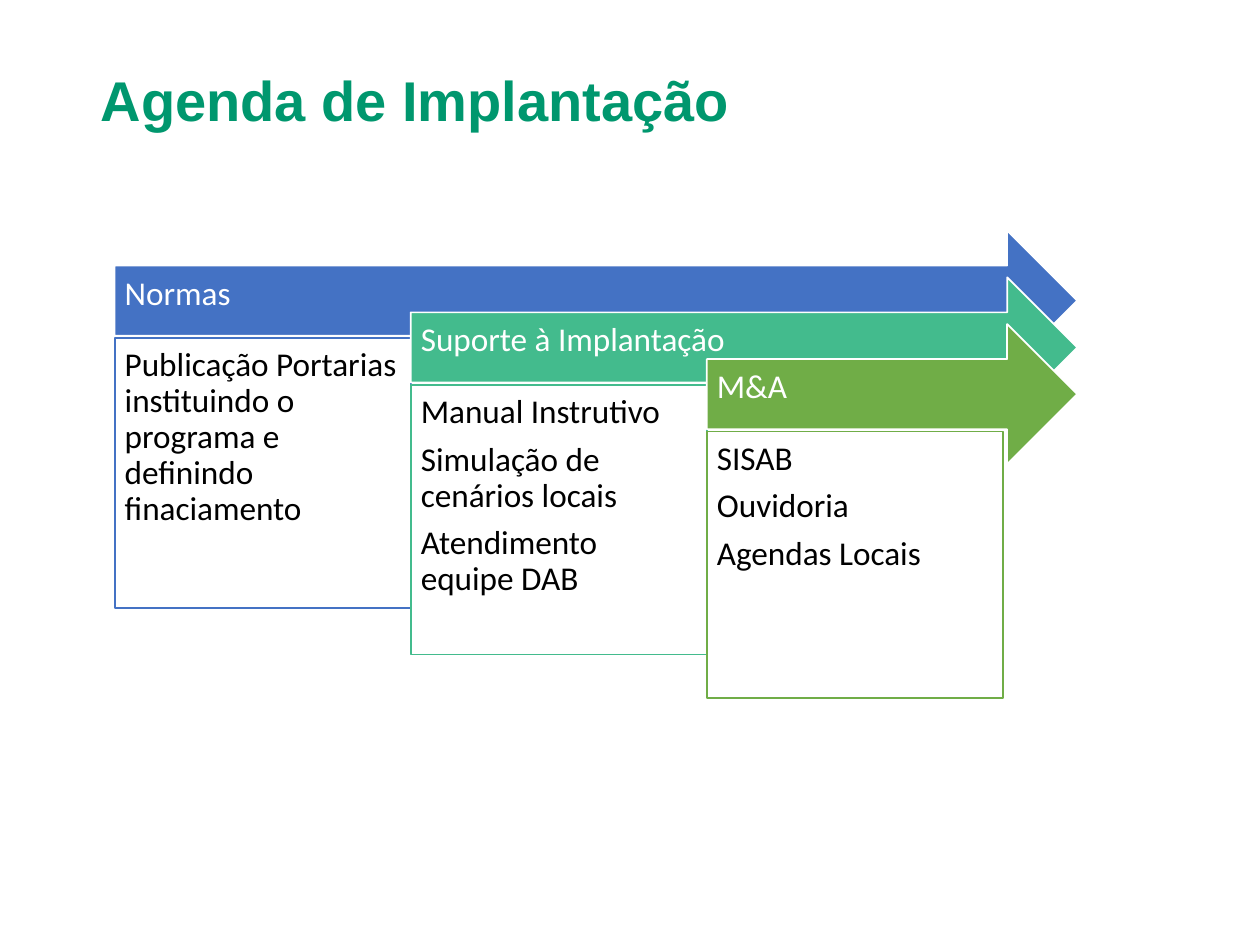
"""Build the implementation agenda slide with three cascading stages."""
from dataclasses import dataclass

from pptx import Presentation
from pptx.dml.color import RGBColor
from pptx.enum.shapes import MSO_SHAPE
from pptx.enum.text import MSO_ANCHOR, PP_ALIGN
from pptx.util import Inches, Pt


@dataclass(frozen=True)
class Theme:
    """Colours, fonts and type sizes of the slide."""
    title: str = "00976E"
    light: str = "FFFFFF"
    dark: str = "000000"
    stages: tuple = ("4472C4", "43BB8D", "70AD47")
    title_font: str = "Arial"
    body_font: str = "Calibri"
    title_size: float = 32
    body_size: float = 19
    paragraph_gap: float = 6.65


@dataclass(frozen=True)
class Box:
    """A rectangle in inches."""
    left: float
    top: float
    width: float
    height: float

    def inner_box(self, left, top, width, height):
        """Return a box given as shares of this one."""
        return Box(self.left + left * self.width, self.top + top * self.height,
                   width * self.width, height * self.height)

    def lengths(self):
        """Return left, top, width and height as slide lengths."""
        return [Inches(value) for value in (self.left, self.top, self.width, self.height)]


THEME = Theme()
SLIDE = Box(0, 0, 10, 7.5)
STAGES = (
    ("Normas", ["Publicação Portarias instituindo o programa e definindo finaciamento"]),
    ("Suporte à Implantação",
     ["Manual Instrutivo", "Simulação de cenários locais", "Atendimento equipe DAB"]),
    ("M&A", ["SISAB", "Ouvidoria", "Agendas Locais"]),
)


def set_margins(frame, left, top, right, bottom):
    """Set the inner margins of a text frame in inches."""
    frame.margin_left, frame.margin_top = Inches(left), Inches(top)
    frame.margin_right, frame.margin_bottom = Inches(right), Inches(bottom)


def style_paragraph(paragraph, font_name, size, color, bold=False):
    """Give a paragraph its font, alignment and line spacing."""
    paragraph.alignment = PP_ALIGN.LEFT
    paragraph.line_spacing = 0.9
    font = paragraph.font
    font.name, font.size, font.bold = font_name, Pt(size), bold
    font.color.rgb = RGBColor.from_string(color)


def add_title(slide, box, text):
    """Place the title placeholder in its box."""
    title = slide.shapes.title
    title.left, title.top, title.width, title.height = box.lengths()
    frame = title.text_frame
    frame.text = text
    frame.word_wrap = True
    frame.vertical_anchor = MSO_ANCHOR.BOTTOM
    set_margins(frame, 0.05, 0.05, 0.05, 0.05)
    style_paragraph(frame.paragraphs[0], THEME.title_font, THEME.title_size, THEME.title, True)


def add_panel(slide, box, kind, fill, line, texts, color):
    """Add a filled, outlined shape with its paragraphs."""
    shape = slide.shapes.add_shape(kind, *box.lengths())
    shape.shadow.inherit = False
    shape.fill.solid()
    shape.fill.fore_color.rgb = RGBColor.from_string(fill)
    shape.line.color.rgb = RGBColor.from_string(line)
    shape.line.width = Pt(1)
    frame = shape.text_frame
    frame.text = "\n".join(texts)
    frame.word_wrap = True
    for paragraph in frame.paragraphs:
        style_paragraph(paragraph, THEME.body_font, THEME.body_size, color)
        paragraph.space_after = Pt(THEME.paragraph_gap)
    return shape


def add_stage(slide, arrow_box, body_box, color, heading, items):
    """Add one stage: a heading arrow and the list below it."""
    arrow = add_panel(slide, arrow_box, MSO_SHAPE.RIGHT_ARROW, color, THEME.light,
                      [heading], THEME.light)
    arrow.text_frame.vertical_anchor = MSO_ANCHOR.MIDDLE
    set_margins(arrow.text_frame, 0.08, 0.08, 0.28, 0.18)
    body = add_panel(slide, body_box, MSO_SHAPE.RECTANGLE, THEME.light, color,
                     items, THEME.dark)
    body.text_frame.vertical_anchor = MSO_ANCHOR.TOP
    set_margins(body.text_frame, 0.08, 0.08, 0.08, 0.08)


def add_cascade(slide, box):
    """Step the stages right and down; all arrows end at the right edge."""
    column, row = 2.35 / box.width, 0.1
    for index, (heading, items) in enumerate(STAGES):
        left, top = index * column, index * row
        body_top = top + 2.3 * row
        arrow_box = box.inner_box(left, top, 1 - left, 3 * row)
        body_box = box.inner_box(left, body_top, column, min(5.77 * row, 1 - body_top))
        add_stage(slide, arrow_box, body_box, THEME.stages[index], heading, items)


def main():
    """Create and save the presentation."""
    presentation = Presentation()
    presentation.slide_width, presentation.slide_height = SLIDE.lengths()[2:]
    slide = presentation.slides.add_slide(presentation.slide_layouts[5])
    add_title(slide, Box(0.75, 0.52, 9.02, 0.59), "Agenda de Implantação")
    add_cascade(slide, Box(0.91, 1.83, 7.64, 3.71))
    presentation.save("out.pptx")


if __name__ == "__main__":
    main()
